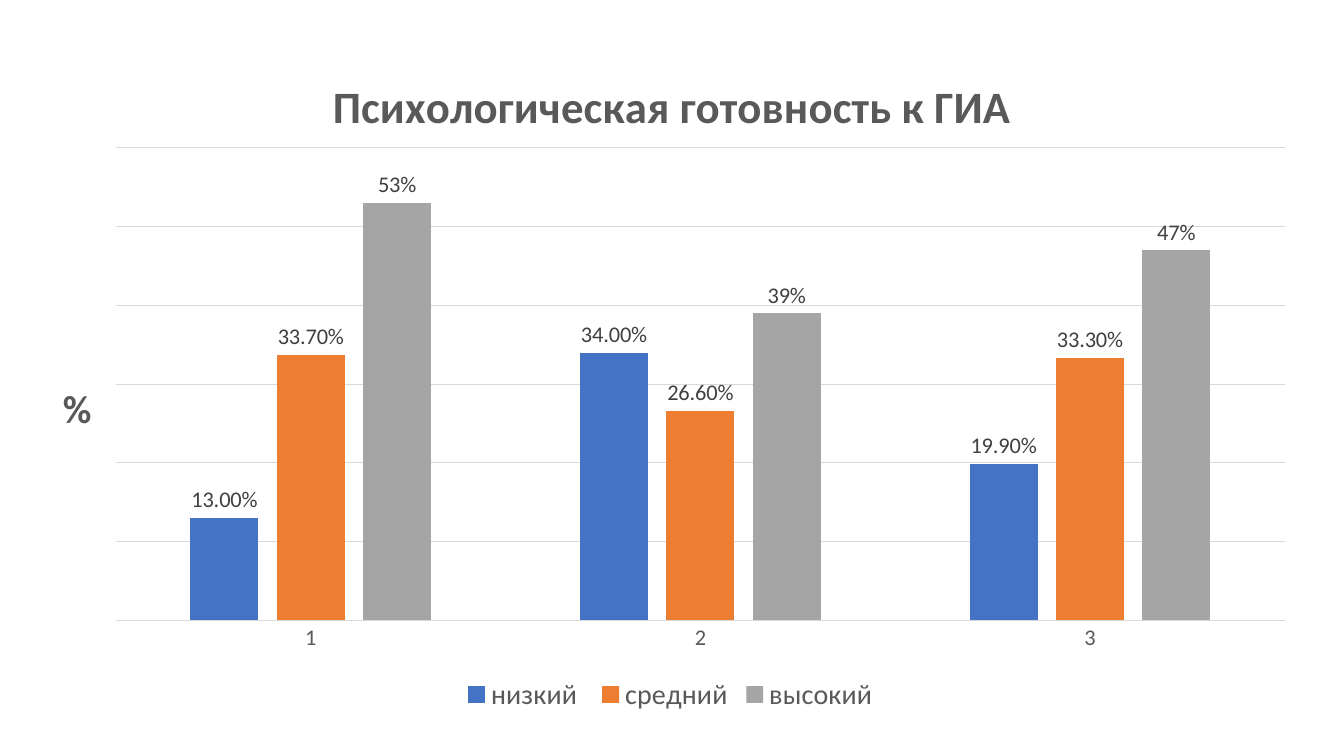
"""Build a slide with a clustered column chart of readiness levels."""
from pptx import Presentation
from pptx.chart.data import CategoryChartData
from pptx.dml.color import RGBColor
from pptx.enum.chart import XL_CHART_TYPE as ChartType
from pptx.enum.chart import XL_LABEL_POSITION as LabelPosition
from pptx.enum.chart import XL_LEGEND_POSITION as LegendPosition
from pptx.enum.chart import XL_TICK_LABEL_POSITION as TickLabels
from pptx.enum.chart import XL_TICK_MARK as TickMark
from pptx.oxml import parse_xml
from pptx.oxml.ns import nsdecls, qn
from pptx.util import Pt

TITLE = "Психологическая готовность к ГИА"
AXIS_TITLE = "%"
CATEGORIES = ["1", "2", "3"]
SERIES = [
    ("низкий ", (0.13, 0.34, 0.199), "4472C4", "0.00%"),
    ("средний", (0.337, 0.266, 0.333), "ED7D31", "0.00%"),
    ("высокий", (0.53, 0.39, 0.47), "A5A5A5", "0%"),
]
FONT, TEXT, LABEL, GRID = "Calibri", "595959", "404040", "D9D9D9"
CHART_BOX = (21.6, 23, 914.4, 489.6)
PLOT_PLACE = {"x": 0.067, "y": 0.169, "w": 0.913, "h": 0.689}
TITLE_PLACE = {"x": 0.23, "y": 0.05}
AXIS_TITLE_PLACE = {"x": 0.02, "y": 0.5}


def color(value):
    return RGBColor.from_string(value)


def style_font(font, size, fill, bold=False):
    font.name, font.size, font.bold = FONT, Pt(size), bold
    font.color.rgb = color(fill)


def style_line(line):
    line.color.rgb = color(GRID)
    line.width = Pt(0.75)


def set_layout(element, place, index, target=""):
    for old in element.findall(qn("c:layout")):
        element.remove(old)
    modes = "".join(f'<c:{key}Mode val="edge"/>' for key in "xy")
    values = "".join(f'<c:{key} val="{value}"/>' for key, value in place.items())
    element.insert(index, parse_xml(
        f'<c:layout {nsdecls("c")}><c:manualLayout>{target}{modes}{values}'
        "</c:manualLayout></c:layout>"))


def write_title(title, text, size, place):
    para = title.text_frame.paragraphs[0]
    span = para.add_run()
    span.text = text
    style_font(span.font, size, TEXT, True)
    set_layout(title._element, place, 1)
    body = title._element.find(".//" + qn("a:bodyPr"))
    body.set("rot", "0")
    body.set("vert", "horz")


def add_readiness_chart(page):
    data = CategoryChartData(number_format="0.00%")
    data.categories = CATEGORIES
    for name, values, _, number_format in SERIES:
        data.add_series(name, values, number_format)
    frame = page.shapes.add_chart(
        ChartType.COLUMN_CLUSTERED, *map(Pt, CHART_BOX), data)
    chart = frame.chart
    style_font(chart.font, 10, "000000")
    chart.has_title = True
    write_title(chart.chart_title, TITLE, 32, TITLE_PLACE)
    chart.has_legend = True
    chart.legend.position = LegendPosition.BOTTOM
    chart.legend.include_in_layout = False
    style_font(chart.legend.font, 20, TEXT)
    return chart


def style_axes(chart):
    category, value = chart.category_axis, chart.value_axis
    category.major_tick_mark = category.minor_tick_mark = TickMark.NONE
    category.tick_label_position = TickLabels.NEXT_TO_AXIS
    style_font(category.tick_labels.font, 16, TEXT)
    style_line(category.format.line)
    value.minimum_scale, value.maximum_scale, value.major_unit = 0, 0.6, 0.1
    value.has_major_gridlines = True
    style_line(value.major_gridlines.format.line)
    value.tick_labels.number_format = "0.00%"
    value.tick_labels.number_format_is_linked = False
    value.has_title = True
    write_title(value.axis_title, AXIS_TITLE, 28, AXIS_TITLE_PLACE)
    value.visible = False


def style_columns(chart):
    plot = chart.plots[0]
    plot.gap_width, plot.overlap, plot.vary_by_categories = 219, -27, False
    for series, (_, _, fill, number_format) in zip(plot.series, SERIES):
        series.format.fill.solid()
        series.format.fill.fore_color.rgb = color(fill)
        labels = series.data_labels
        labels.show_value = True
        labels.position = LabelPosition.OUTSIDE_END
        labels.number_format = number_format
        labels.number_format_is_linked = False
        style_font(labels.font, 16, LABEL)
    area = chart._chartSpace.find(".//" + qn("c:plotArea"))
    set_layout(area, PLOT_PLACE, 0, '<c:layoutTarget val="inner"/>')


def main():
    deck = Presentation()
    deck.slide_width, deck.slide_height = Pt(960), Pt(540)
    page = deck.slides.add_slide(deck.slide_layouts[6])
    chart = add_readiness_chart(page)
    style_axes(chart)
    style_columns(chart)
    deck.save("out.pptx")


if __name__ == "__main__":
    main()
